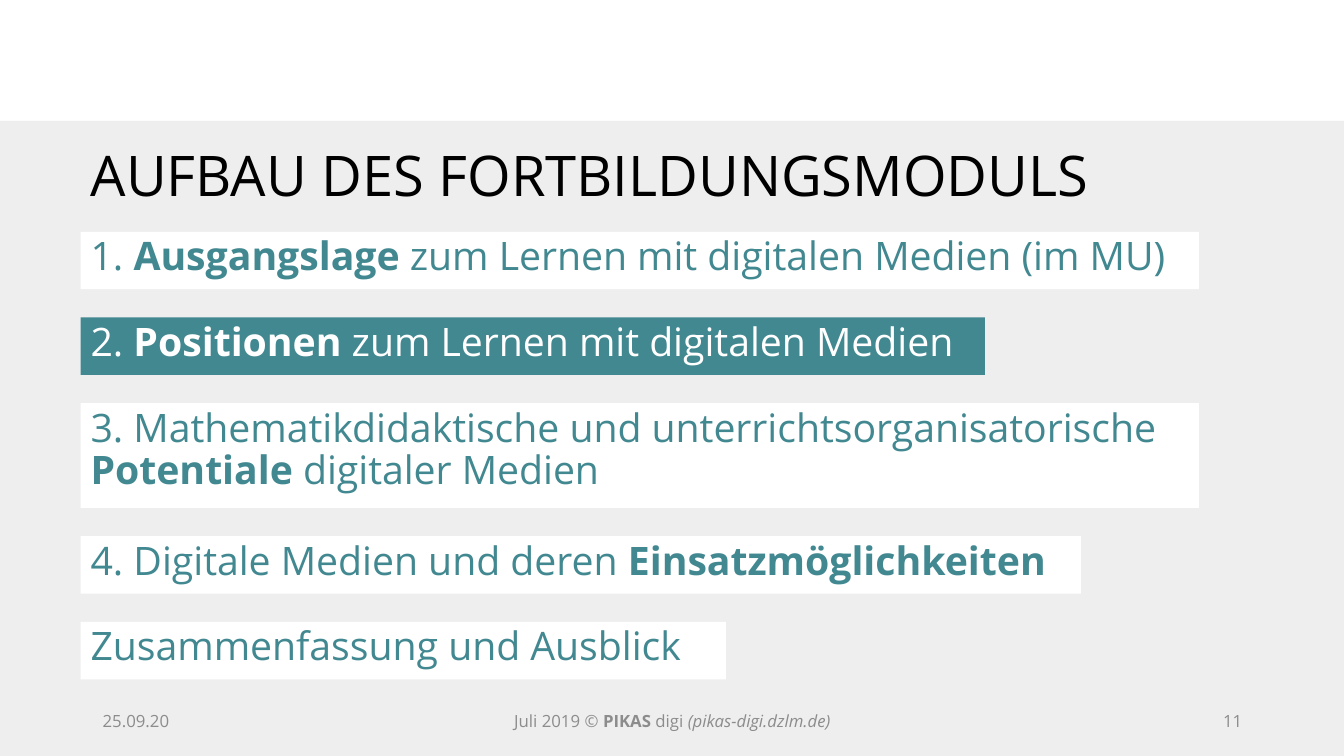
from pptx import Presentation
from pptx.dml.color import RGBColor
from pptx.enum.shapes import MSO_SHAPE as Form
from pptx.enum.text import MSO_ANCHOR as Anchor, PP_ALIGN as Align
from pptx.util import Inches, Pt

WIDE, HIGH = 13.33, 7.5
TEAL, WHITE, GREY, BLACK, MUTED = "428891", "FFFFFF", "EEEEEE", "000000", "8C8C8C"


def tint(code):
    return RGBColor.from_string(code)


class Deck:
    """Style and current slide; boxes are (left, top, width, height) in inches."""
    font = "Open Sans"
    left = 0.06 * WIDE    # shared left edge of title and bars
    gap = 0.28            # space between bars
    line = 0.47           # height of one line in a bar
    pad = 0.1             # upper and lower inset together

    def __init__(self):
        self.show = Presentation()
        self.show.slide_width, self.show.slide_height = Inches(WIDE), Inches(HIGH)
        self.slide = self.show.slides.add_slide(self.show.slide_layouts[5])

    def label(self, shape, runs, size, color, align=Align.LEFT, anchor=Anchor.TOP, pitch=1.0):
        frame = shape.text_frame
        frame.word_wrap = True
        frame.vertical_anchor = anchor
        para = frame.paragraphs[0]
        para.alignment, para.line_spacing = align, pitch
        for text, style in runs:
            run = para.add_run()
            run.text = text
            font = run.font
            font.name, font.size = self.font, Pt(size)
            font.bold, font.italic = style == "b", style == "i"
            font.color.rgb = tint(color)

    def rect(self, box, fill):
        shape = self.slide.shapes.add_shape(Form.RECTANGLE, *map(Inches, box))
        shape.shadow.inherit = False
        shape.fill.solid()
        shape.fill.fore_color.rgb = tint(fill)
        shape.line.fill.background()
        return shape

    def title(self, text, box):
        shape = self.slide.shapes.title
        shape.left, shape.top, shape.width, shape.height = map(Inches, box)
        self.label(shape, [(text, "")], 40, BLACK, anchor=Anchor.MIDDLE, pitch=0.9)

    def bar(self, top, width, lines, runs, live):
        """Draw one agenda bar and return the top of the next."""
        high = lines * self.line + self.pad
        fill, color = (TEAL, WHITE) if live else (WHITE, TEAL)
        shape = self.rect((self.left, top, width, high), fill)
        self.label(shape, runs, 28, color, pitch=0.9)
        return top + high + self.gap

    def foot(self, left, width, runs, align):
        box = self.slide.shapes.add_textbox(*map(Inches, (left, 6.95, width, 0.4)))
        self.label(box, runs, 12, MUTED, align, Anchor.MIDDLE)


# Width, line count and runs of each agenda item
ITEMS = [
    (11.09, 1, [("1. ", ""), ("Ausgangslage", "b"),
                (" zum Lernen mit digitalen Medien (im MU)", "")]),
    (8.97, 1, [("2. ", ""), ("Positionen", "b"),
               (" zum Lernen mit digitalen Medien", "")]),
    (11.09, 2, [("3. Mathematikdidaktische und unterrichtsorganisatorische ", ""),
                ("Potentiale", "b"), (" digitaler Medien", "")]),
    (9.92, 1, [("4. Digitale Medien und deren ", ""), ("Einsatzmöglichkeiten", "b")]),
    (6.4, 1, [("Zusammenfassung und Ausblick", "")]),
]
LIVE = 1    # index of the current item

# Left, width, runs and alignment of each footer field
FEET = [
    (0.92, 3, [("25.09.20", "")], Align.LEFT),
    (4.42, 4.5, [("Juli 2019 © ", ""), ("PIKAS", "b"), (" digi ", ""),
                 ("(pikas-digi.dzlm.de)", "i")], Align.CENTER),
    (9.42, 3, [("11", "")], Align.RIGHT),
]


def main():
    deck = Deck()

    # Grey panel, moved behind the title
    panel = deck.rect((0, 0.16 * HIGH, WIDE, 0.84 * HIGH), GREY)
    deck.slide.shapes.title.element.addprevious(panel.element)

    # Title
    deck.title("AUFBAU DES FORTBILDUNGSMODULS", (deck.left, 1.38, 11.74, 0.77))

    # Agenda bars
    top = 2.3
    for spot, (width, lines, runs) in enumerate(ITEMS):
        top = deck.bar(top, width, lines, runs, spot == LIVE)

    # Footer
    for field in FEET:
        deck.foot(*field)

    deck.show.save("out.pptx")


if __name__ == "__main__":
    main()
